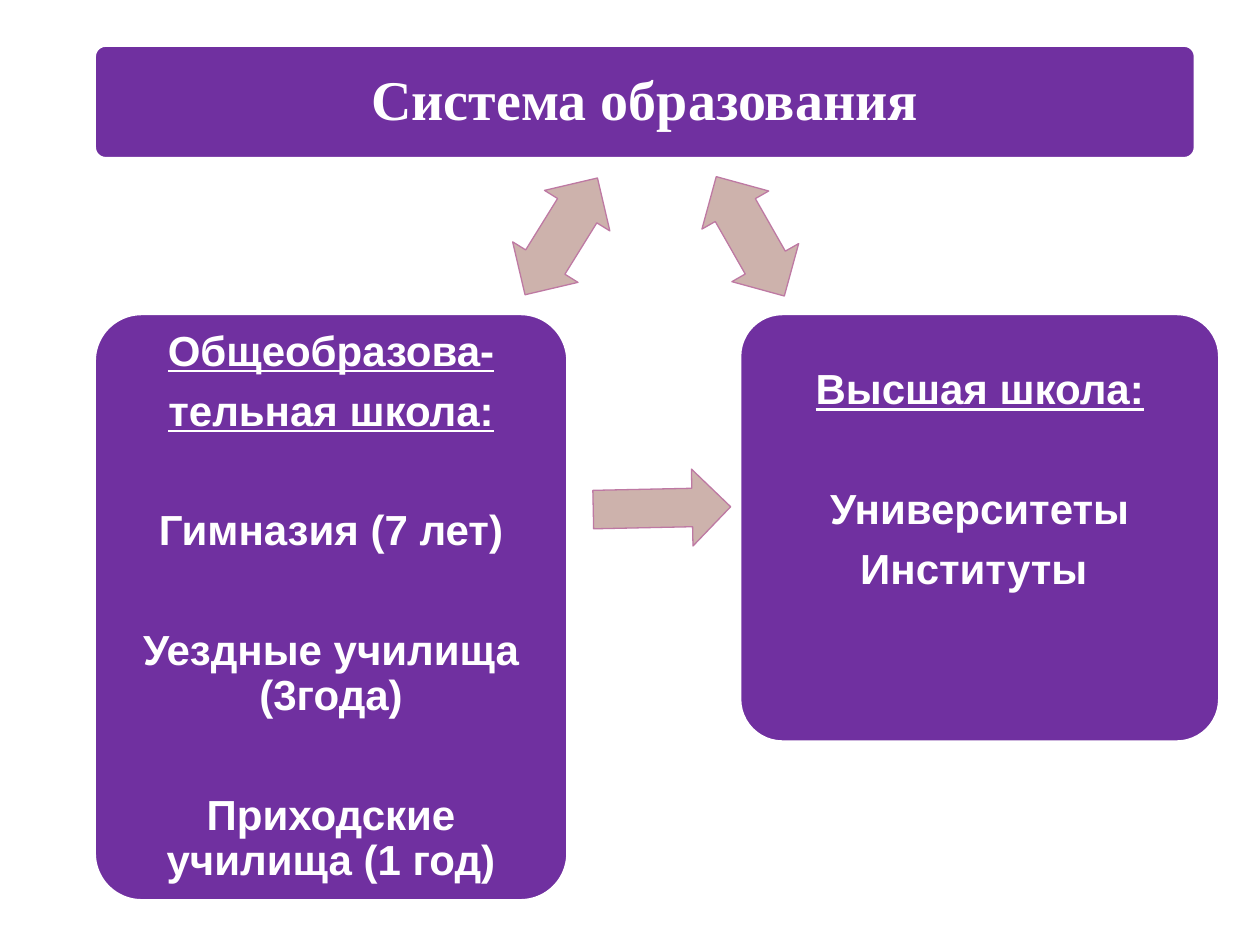
import dataclasses

import pptx
import pptx.dml.color
import pptx.enum.shapes
import pptx.enum.text
import pptx.util

Cm = pptx.util.Cm
Pt = pptx.util.Pt
Color = pptx.dml.color.RGBColor
Kind = pptx.enum.shapes.MSO_SHAPE
Anchor = pptx.enum.text.MSO_ANCHOR
Align = pptx.enum.text.PP_ALIGN


@dataclasses.dataclass(frozen=True)
class Theme:
    panel: Color = Color(0x70, 0x30, 0xA0)
    white: Color = Color(0xFF, 0xFF, 0xFF)
    arrow: Color = Color(0xCD, 0xB2, 0xAC)
    arrow_line: Color = Color(0xBE, 0x79, 0xA3)
    title_font: str = "Times New Roman"
    body_font: str = "Arial"
    title_size: int = 32
    body_size: int = 24
    space_share: float = 0.35
    group_gap: int = 34


THEME = Theme()


def apply_format(target, values):
    for name, value in values.items():
        setattr(target, name, value)


def add_shape(page, kind, place, fill, line, width, adjustments):
    shape = page.shapes.add_shape(kind, *map(Cm, place))
    shape.shadow.inherit = False
    shape.fill.solid()
    shape.fill.fore_color.rgb = fill
    shape.line.color.rgb = line
    shape.line.width = Pt(width)
    for index, value in enumerate(adjustments):
        shape.adjustments[index] = value
    return shape


def add_panel(page, place, groups, font, size, inset, top=None, heading=False):
    panel = add_shape(page, Kind.ROUNDED_RECTANGLE, place, THEME.panel, THEME.white, 2, [0.1])
    box = panel.text_frame
    apply_format(box, {
        "word_wrap": True,
        "vertical_anchor": Anchor.MIDDLE if top is None else Anchor.TOP,
        "margin_left": Cm(inset),
        "margin_right": Cm(inset),
        "margin_top": Cm(inset if top is None else top),
        "margin_bottom": Cm(inset),
    })
    para = box.paragraphs[0]
    for group_index, group in enumerate(groups):
        for line_index, text in enumerate(group):
            first = group_index == line_index == 0
            para = para if first else box.add_paragraph()
            starts_group = group_index > 0 and line_index == 0
            apply_format(para, {
                "alignment": Align.CENTER,
                "line_spacing": 0.9,
                "space_before": Pt(THEME.group_gap if starts_group else 0),
                "space_after": Pt(size * THEME.space_share),
            })
            span = para.add_run()
            span.text = text
            apply_format(span.font, {
                "name": font,
                "size": Pt(size),
                "bold": True,
                "underline": heading and group_index == 0,
            })
            span.font.color.rgb = THEME.white


def add_arrow(page, kind, left, top, rotation, adjustments):
    arrow = add_shape(page, kind, (left, top, 2.77, 1.55), THEME.arrow,
                      THEME.arrow_line, 0.75, adjustments)
    arrow.rotation = rotation


def main():
    deck = pptx.Presentation()
    apply_format(deck, {"slide_width": Cm(25.4), "slide_height": Cm(19.05)})
    page = deck.slides.add_slide(deck.slide_layouts[6])

    add_panel(page, (1.9, 0.91, 22.2, 2.29), [["Система образования"]],
              THEME.title_font, THEME.title_size, 0.38)
    add_arrow(page, Kind.LEFT_RIGHT_ARROW, 13.74, 3.99, 60.3, [0.6, 0.5])
    add_panel(page, (14.91, 6.32, 9.68, 8.64),
              [["Высшая школа:"], ["Университеты", "Институты "]],
              THEME.body_font, THEME.body_size, 0.5, top=0.86, heading=True)
    add_arrow(page, Kind.RIGHT_ARROW, 11.96, 9.47, 358.8, [0.5, 0.5])
    add_panel(page, (1.9, 6.32, 9.55, 11.84),
              [["Общеобразова-", "тельная школа:"], ["Гимназия (7 лет)"],
               ["Уездные училища (3года)"], ["Приходские училища (1 год)"]],
              THEME.body_font, THEME.body_size, 0.53, heading=True)
    add_arrow(page, Kind.LEFT_RIGHT_ARROW, 9.93, 3.99, 301.8, [0.6, 0.5])

    deck.save("out.pptx")


if __name__ == "__main__":
    main()
